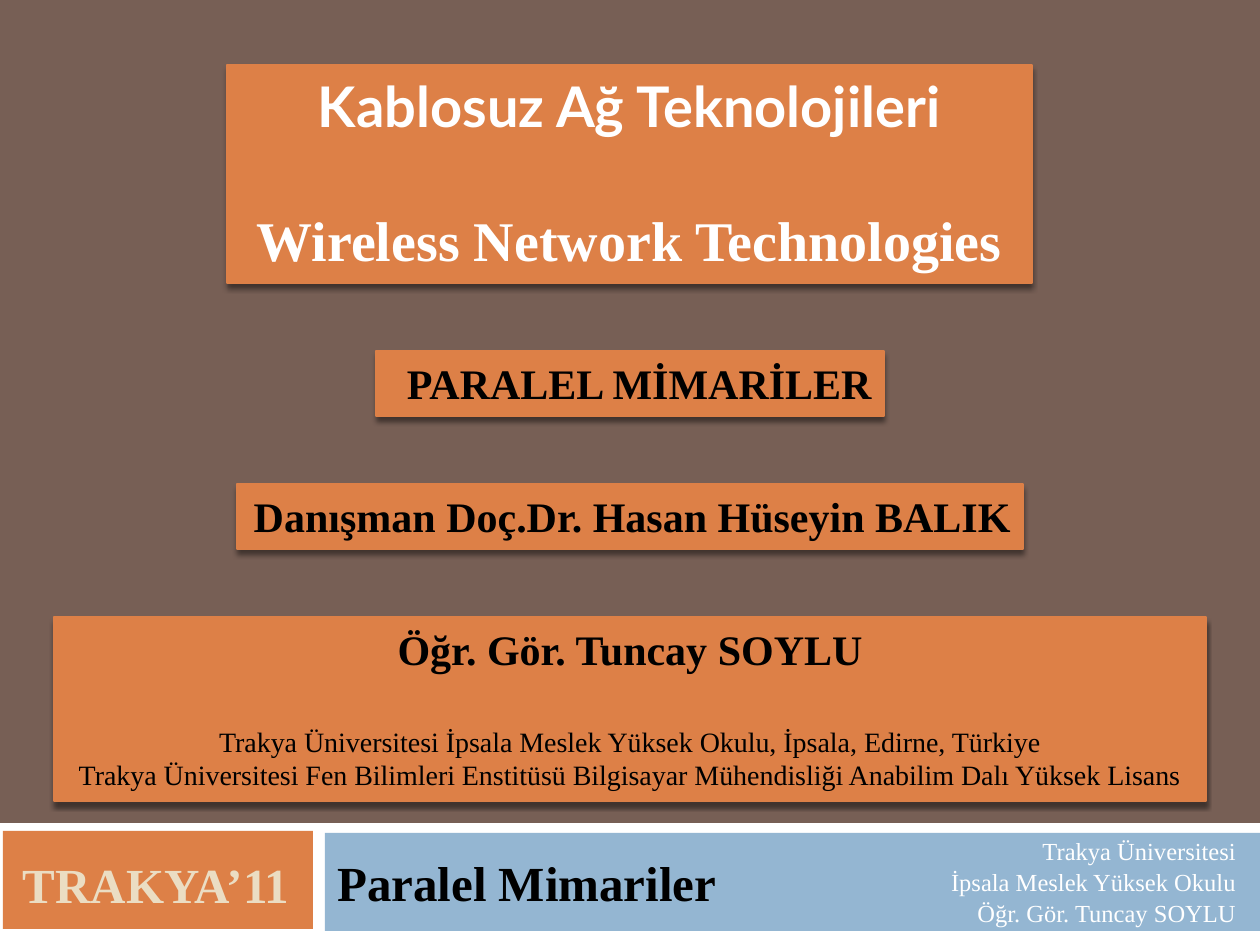
from lxml import etree
from pptx import Presentation
from pptx.dml.color import RGBColor
from pptx.enum import shapes, text
from pptx.oxml import ns
from pptx.util import Emu, Pt

PX = 914400 / 126
BROWN = RGBColor(0x77, 0x5F, 0x55)
ORANGE = RGBColor(0xDD, 0x80, 0x47)
BLUE = RGBColor(0x94, 0xB6, 0xD2)
CREAM = RGBColor(0xEB, 0xDD, 0xC3)
WHITE = RGBColor(0xFF, 0xFF, 0xFF)
BLACK = RGBColor(0, 0, 0)
SERIF = "Times New Roman"
LEFT, MID, RIGHT = text.PP_ALIGN.LEFT, text.PP_ALIGN.CENTER, text.PP_ALIGN.RIGHT
TOP, CENTRE = text.MSO_ANCHOR.TOP, text.MSO_ANCHOR.MIDDLE


def scale(*vals):
    """Turn pixel lengths into EMU."""
    return [Emu(round(v * PX)) for v in vals]


def add_rect(slide, box, fill):
    """Add a plain filled rectangle."""
    rect = slide.shapes.add_shape(shapes.MSO_SHAPE.RECTANGLE, *scale(*box))
    rect.fill.solid()
    rect.fill.fore_color.rgb = fill
    rect.line.fill.background()
    rect.shadow.inherit = False
    return rect


def write(shape, rows, align, anchor):
    """Write rows of (words, size, bold, colour, font, gap before)."""
    frame = shape.text_frame
    frame.word_wrap = True
    frame.vertical_anchor = anchor
    frame.text = "\n".join(row[0] for row in rows)
    for para, (_, size, bold, color, face, gap) in zip(frame.paragraphs, rows):
        para.alignment = align
        para.space_before = Pt(gap)
        for run in para.runs:
            font = run.font
            font.size, font.bold, font.name = Pt(size), bold, face
            font.color.rgb = color


def style_card(card):
    """Give a card its orange fill, thin line and soft shadow."""
    card.fill.solid()
    card.fill.fore_color.rgb = ORANGE
    card.line.color.rgb = ORANGE
    card.line.width = Pt(0.79)
    card.shadow.inherit = False
    effect = card.element.spPr.find(ns.qn("a:effectLst"))
    shade = etree.SubElement(effect, ns.qn("a:outerShdw"), blurRad=str(Pt(3)),
                             dist=str(Pt(2.4)), dir="5400000", rotWithShape="0")
    color = etree.SubElement(shade, ns.qn("a:srgbClr"), val=str(BLACK))
    etree.SubElement(color, ns.qn("a:alpha"), val="45000")


def add_title(slide, box):
    """Place the bilingual course title."""
    title = slide.shapes.title
    title.left, title.top, title.width, title.height = scale(*box)
    style_card(title)
    write(title, [("Kablosuz Ağ Teknolojileri", 32, True, WHITE, "Lato", 0),
                  ("Wireless Network Technologies", 32, True, WHITE, SERIF, 38.5)],
          MID, TOP)
    title.text_frame.auto_size = text.MSO_AUTO_SIZE.SHAPE_TO_FIT_TEXT


def add_card(slide, box, rows, align):
    """Add a shadowed card with text."""
    card = add_rect(slide, box, ORANGE)
    style_card(card)
    write(card, rows, align, TOP)
    card.text_frame.auto_size = text.MSO_AUTO_SIZE.SHAPE_TO_FIT_TEXT


def add_footer(slide, box):
    """Add the footer band with event, topic and school."""
    x, y, w, h = box
    add_rect(slide, box, WHITE)
    add_rect(slide, (x + 3, y + 8, 310, 98), ORANGE)
    topic = add_rect(slide, (x + 325, y + 10, w - 325, 98), BLUE)
    write(topic, [("Paralel Mimariler", 28, True, BLACK, SERIF, 0)], LEFT, CENTRE)
    event = slide.shapes.add_textbox(*scale(x, y + 11, 312, 100))
    write(event, [("TRAKYA’11", 28, True, CREAM, SERIF, 0)], MID, CENTRE)
    school = slide.shapes.add_textbox(*scale(x + 925, y + 10, 314, 98))
    frame = school.text_frame
    frame.margin_left, frame.margin_right = scale(0, 3)
    frame.margin_top = frame.margin_bottom = 0
    names = "Trakya Üniversitesi", "İpsala Meslek Yüksek Okulu", "Öğr. Gör. Tuncay SOYLU"
    write(school, [(name, 14, False, WHITE, SERIF, 1) for name in names], RIGHT, CENTRE)


def main():
    """Build and save the cover slide."""
    deck = Presentation()
    deck.slide_width, deck.slide_height = scale(1260, 945)
    slide = deck.slides.add_slide(deck.slide_layouts[5])
    slide.background.fill.solid()
    slide.background.fill.fore_color.rgb = BROWN
    add_footer(slide, (0, 823, 1260, 122))
    add_card(slide, (54, 617, 1152, 184), [
        ("Öğr. Gör. Tuncay SOYLU", 24, True, BLACK, SERIF, 0),
        ("Trakya Üniversitesi İpsala Meslek Yüksek Okulu, İpsala, Edirne, Türkiye",
         16, False, BLACK, SERIF, 29),
        ("Trakya Üniversitesi Fen Bilimleri Enstitüsü Bilgisayar Mühendisliği "
         "Anabilim Dalı Yüksek Lisans", 16, False, BLACK, SERIF, 0)], MID)
    add_title(slide, (227, 65, 805, 218))
    for box, words in (((376, 351, 508, 65), "PARALEL MİMARİLER"),
                       ((237, 484, 786, 65), "Danışman Doç.Dr. Hasan Hüseyin BALIK")):
        add_card(slide, box, [(words, 24, True, BLACK, SERIF, 0)], RIGHT)
    deck.save("out.pptx")


if __name__ == "__main__":
    main()
